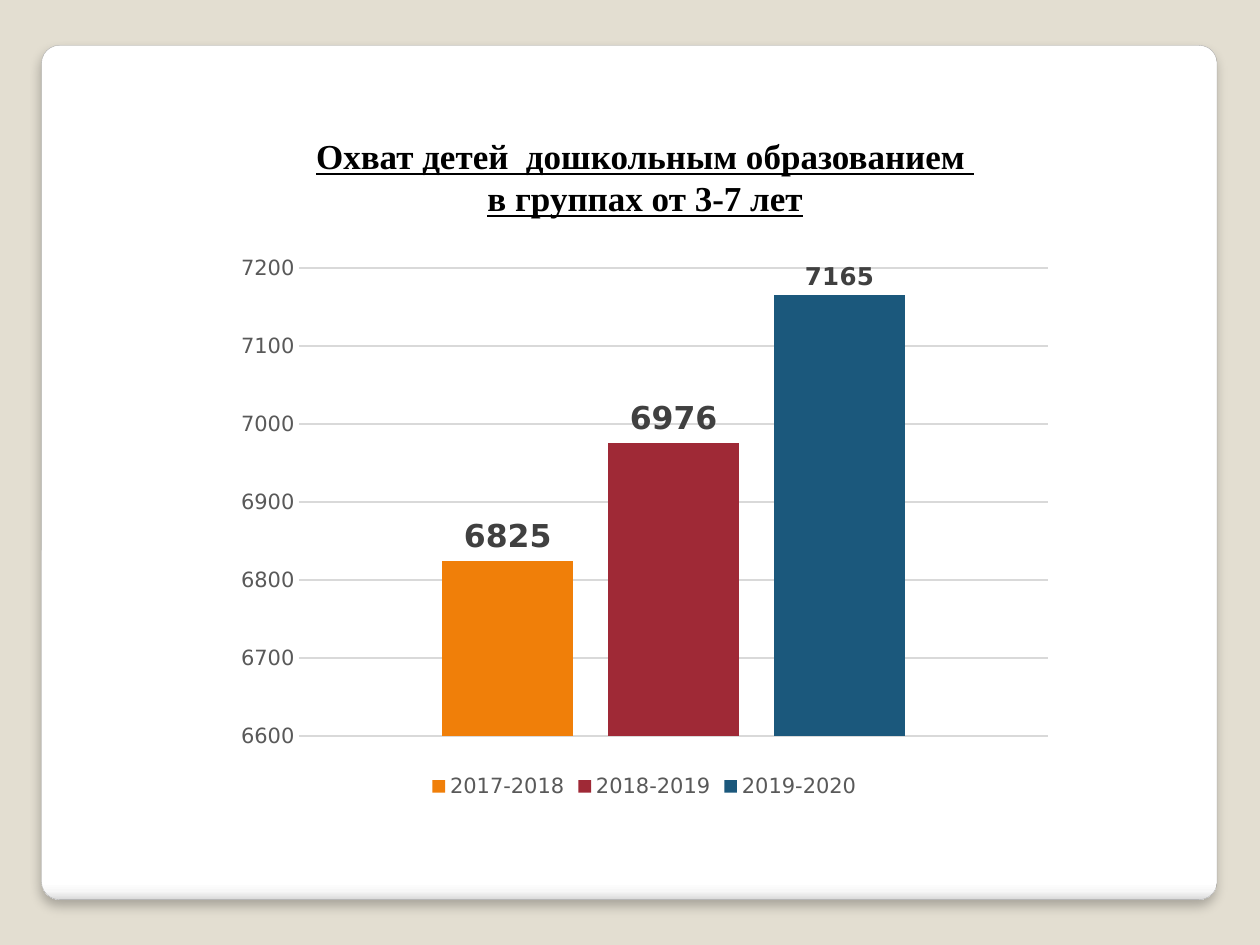
import pptx
import pptx.util
import pptx.oxml
import pptx.oxml.ns
import pptx.chart.data
import pptx.dml.color
import pptx.enum.chart
import pptx.enum.shapes
import pptx.enum.text
from pptx.util import Inches

CHART_FONT = "DejaVu Sans"
TITLE = ["Охват детей  дошкольным образованием ", "в группах от 3-7 лет"]
# School year, number of children, bar colour, label size
YEARS = [
    ("2017-2018", 6825, "F07F09", 18),
    ("2018-2019", 6976, "9F2936", 18),
    ("2019-2020", 7165, "1B587C", 14),
]
CARD_STOPS = [(0, "FFFFFF"), (98, "FFFFFF"), (99, "F7F7F7"), (100, "DADADA")]


def rgb(value):
    return pptx.dml.color.RGBColor.from_string(value)


def set_font(font, name, size, color, bold=False):
    font.name = name
    font.size = pptx.util.Pt(size)
    font.bold = bold
    font.color.rgb = rgb(color)


def add_card(slide, box):
    sp = slide.shapes.add_shape(pptx.enum.shapes.MSO_SHAPE.ROUNDED_RECTANGLE, *box)
    sp.adjustments[0] = 0.021
    sp.line.color.rgb = rgb("A4A4A4")
    sp.line.width = pptx.util.Pt(0.16)

    # Four-stop fill that darkens at the bottom edge
    sp.fill.gradient()
    sp.fill.gradient_angle = 270
    stops = sp._element.spPr.find(".//" + pptx.oxml.ns.qn("a:gsLst"))
    for old in list(stops):
        stops.remove(old)
    ns = pptx.oxml.ns.nsdecls("a")
    for percent, color in CARD_STOPS:
        stops.append(pptx.oxml.parse_xml(
            f'<a:gs {ns} pos="{percent * 1000}"><a:srgbClr val="{color}"/></a:gs>'))

    # Soft shadow below
    sp.shadow.inherit = False
    effects = sp._element.spPr.find(pptx.oxml.ns.qn("a:effectLst"))
    effects.append(pptx.oxml.parse_xml(
        f'<a:outerShdw {ns} blurRad="{pptx.util.Pt(6)}" dist="{pptx.util.Pt(4)}" '
        'dir="5400000" algn="t" rotWithShape="0">'
        '<a:srgbClr val="000000"><a:alpha val="25000"/></a:srgbClr></a:outerShdw>'))


def add_title(slide, box):
    tf = slide.shapes.add_textbox(*box).text_frame
    tf.word_wrap = True
    tf.text = "\n".join(TITLE)
    for p in tf.paragraphs:
        p.alignment = pptx.enum.text.PP_ALIGN.CENTER
        for r in p.runs:
            set_font(r.font, "Times New Roman", 20, "000000", bold=True)
            r.font.underline = True


def add_coverage_chart(slide, box):
    data = pptx.chart.data.CategoryChartData()
    data.categories = ["1"]
    for year, children, _, _ in YEARS:
        data.add_series(year, [children])
    chart = slide.shapes.add_chart(
        pptx.enum.chart.XL_CHART_TYPE.COLUMN_CLUSTERED, *box, data).chart
    set_font(chart.font, CHART_FONT, 10, "000000")
    chart.has_title = False

    # Legend
    chart.has_legend = True
    chart.legend.position = pptx.enum.chart.XL_LEGEND_POSITION.BOTTOM
    chart.legend.include_in_layout = False
    set_font(chart.legend.font, CHART_FONT, 12, "595959")

    # Axes
    chart.category_axis.visible = False
    axis = chart.value_axis
    axis.major_tick_mark = pptx.enum.chart.XL_TICK_MARK.NONE
    axis.format.line.fill.background()
    axis.major_gridlines.format.line.color.rgb = rgb("D9D9D9")
    axis.major_gridlines.format.line.width = pptx.util.Pt(0.75)
    axis.minimum_scale, axis.maximum_scale, axis.major_unit = 6600, 7200, 100
    set_font(axis.tick_labels.font, CHART_FONT, 12, "595959")

    # Bars and their values
    plot = chart.plots[0]
    plot.vary_by_categories = False
    plot.gap_width = 219
    plot.overlap = -27
    for series, (_, _, color, size) in zip(plot.series, YEARS):
        series.format.fill.solid()
        series.format.fill.fore_color.rgb = rgb(color)
        labels = series.data_labels
        labels.show_value = True
        labels.position = pptx.enum.chart.XL_LABEL_POSITION.OUTSIDE_END
        set_font(labels.font, CHART_FONT, size, "404040", bold=True)


def main():
    prs = pptx.Presentation()
    prs.slide_width, prs.slide_height = Inches(10), Inches(7.5)
    slide = prs.slides.add_slide(prs.slide_layouts[6])
    slide.background.fill.solid()
    slide.background.fill.fore_color.rgb = rgb("E3DED1")

    add_card(slide, [Inches(v) for v in (0.33, 0.36, 9.33, 6.78)])
    add_title(slide, [Inches(v) for v in (1.41, 1.02, 7.42, 0.77)])
    add_coverage_chart(slide, [Inches(v) for v in (1.78, 1.94, 6.67, 4.44)])
    prs.save("out.pptx")


if __name__ == "__main__":
    main()
